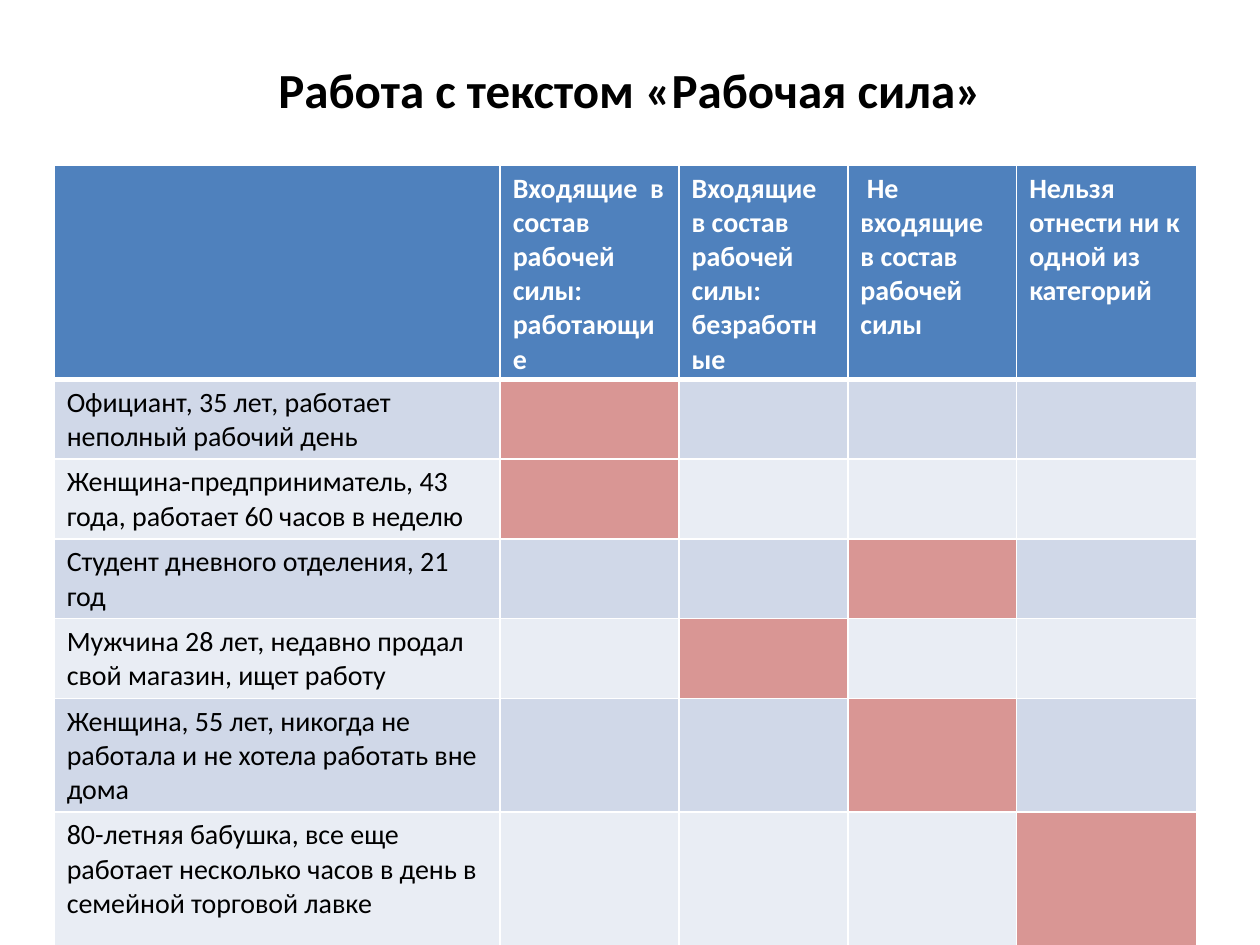
"""Build a slide with a table that sorts people by labour force category."""
from lxml import etree
from pptx import Presentation
from pptx.dml.color import RGBColor
from pptx.enum import text
from pptx.oxml import ns
from pptx.util import Inches, Pt

BLACK = RGBColor(0x00, 0x00, 0x00)
WHITE = RGBColor(0xFF, 0xFF, 0xFF)
HEADER_BLUE = RGBColor(0x4F, 0x81, 0xBD)
BANDS = (RGBColor(0xD0, 0xD8, 0xE8), RGBColor(0xE9, 0xED, 0xF4))
ANSWER_RED = RGBColor(0xD9, 0x96, 0x94)

TITLE_FONT = {"name": "Calibri", "size": Pt(28), "bold": True}
HEADER_FONT = {"name": "Calibri", "size": Pt(16), "bold": True}
PERSON_FONT = {"name": "Calibri", "size": Pt(16), "bold": False}

CATEGORIES = [
    "",
    "Входящие  в состав рабочей силы: работающие",
    "Входящие  в состав рабочей силы: безработные",
    " Не входящие  в состав рабочей силы",
    "Нельзя отнести ни к одной из категорий",
]
PEOPLE = [
    ("Официант, 35 лет, работает неполный рабочий день", 1),
    ("Женщина-предприниматель, 43 года, работает 60 часов в неделю", 1),
    ("Студент дневного отделения, 21 год", 3),
    ("Мужчина 28 лет, недавно продал свой магазин, ищет работу", 2),
    ("Женщина, 55 лет, никогда не работала и не хотела работать вне дома", 3),
    ("80-летняя бабушка, все еще работает несколько часов в день в семейной торговой лавке", 4),
]
COLUMN_WIDTHS = [3.54, 1.42, 1.34, 1.34, 1.43]
ROW_HEIGHTS = [1.64, 0.61, 0.6, 0.61, 0.6, 0.87, 1.13]


def write(paragraph, wording, font_values, color):
    run = paragraph.add_run()
    run.text = wording
    for attribute, value in font_values.items():
        setattr(run.font, attribute, value)
    run.font.color.rgb = color


def add_borders(cell, widths):
    properties = cell._tc.get_or_add_tcPr()
    for position, (side, width) in enumerate(widths.items()):
        line = etree.Element(ns.qn(f"a:ln{side}"), w=str(Pt(width)))
        fill = etree.SubElement(line, ns.qn("a:solidFill"))
        etree.SubElement(fill, ns.qn("a:srgbClr"), val=str(WHITE))
        properties.insert(position, line)


prs = Presentation()
prs.slide_width, prs.slide_height = Inches(10), Inches(7.5)
slide = prs.slides.add_slide(prs.slide_layouts[6])

title = slide.shapes.add_textbox(Inches(0.5), Inches(0.3), Inches(9), Inches(0.81)).text_frame
title.word_wrap = True
title.vertical_anchor = text.MSO_ANCHOR.MIDDLE
title.paragraphs[0].alignment = text.PP_ALIGN.CENTER
write(title.paragraphs[0], "Работа с текстом «Рабочая сила»", TITLE_FONT, BLACK)

labour_table = slide.shapes.add_table(
    len(ROW_HEIGHTS), len(COLUMN_WIDTHS),
    Inches(0.43), Inches(1.31), Inches(sum(COLUMN_WIDTHS)), Inches(sum(ROW_HEIGHTS)),
).table
for column, width in zip(labour_table.columns, COLUMN_WIDTHS):
    column.width = Inches(width)
for row, height in zip(labour_table.rows, ROW_HEIGHTS):
    row.height = Inches(height)

for c, category in enumerate(CATEGORIES):
    cell = labour_table.cell(0, c)
    cell.fill.solid()
    cell.fill.fore_color.rgb = HEADER_BLUE
    add_borders(cell, {"L": 1, "R": 1, "T": 1, "B": 3})
    if category:
        write(cell.text_frame.paragraphs[0], category, HEADER_FONT, WHITE)

for r, (person, answer) in enumerate(PEOPLE, start=1):
    for c in range(len(CATEGORIES)):
        cell = labour_table.cell(r, c)
        cell.fill.solid()
        cell.fill.fore_color.rgb = ANSWER_RED if c == answer else BANDS[(r - 1) % 2]
        add_borders(cell, {"L": 1, "R": 1, "T": 3 if r == 1 else 1, "B": 1})
    write(labour_table.cell(r, 0).text_frame.paragraphs[0], person, PERSON_FONT, BLACK)

prs.save("out.pptx")
